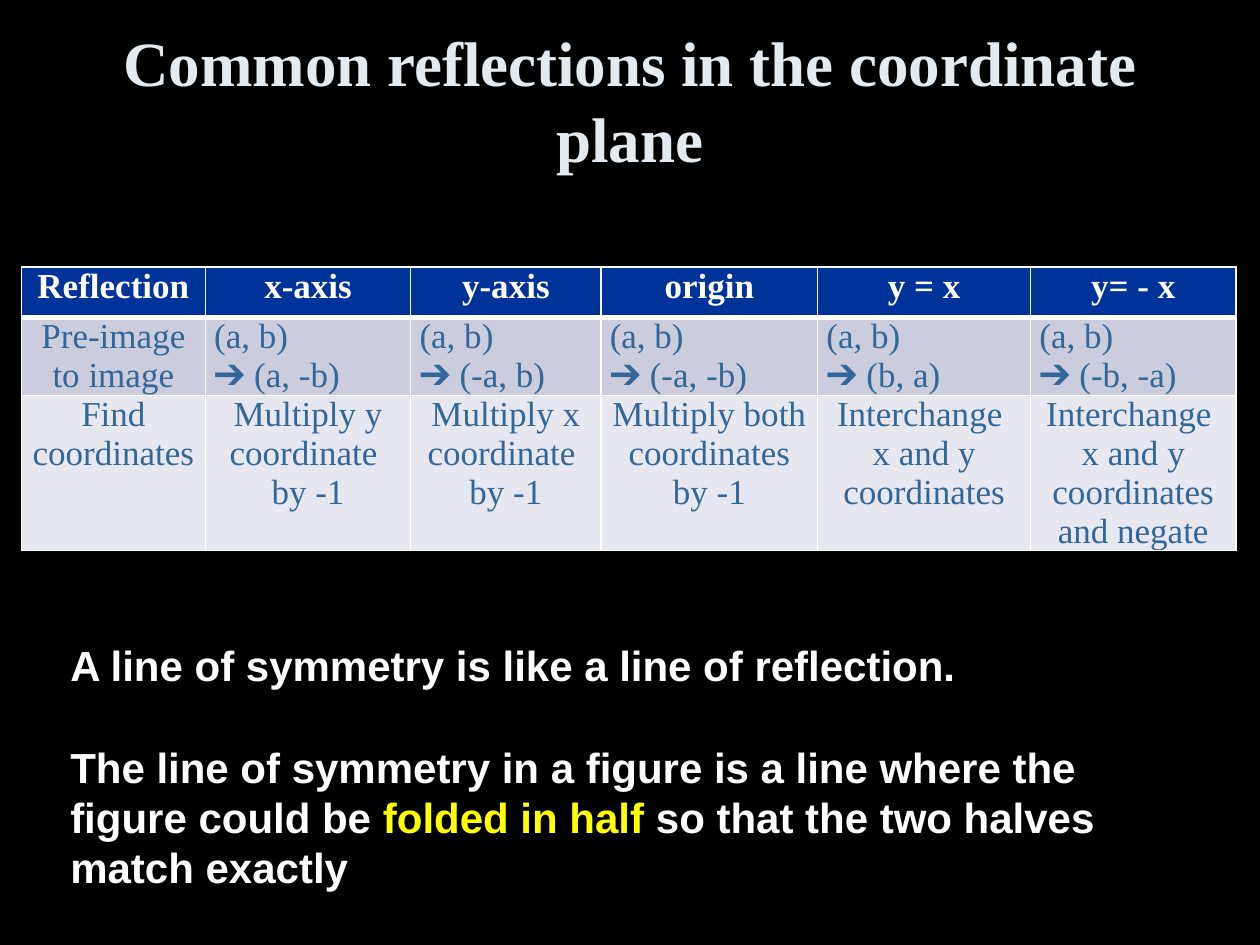
from lxml.etree import SubElement
from pptx import Presentation
from pptx.dml.color import RGBColor
from pptx.enum.text import MSO_ANCHOR as Anchor, MSO_AUTO_SIZE as AutoSize, PP_ALIGN as Align
from pptx.oxml.ns import qn
from pptx.util import Inches, Pt

WHITE, YELLOW, BLUE = "FFFFFF", "FFFF00", "336699"
TITLE_FONT = {"name": "Times New Roman", "size": Pt(36), "bold": True}
HEADER_FONT = {"name": "Times New Roman", "size": Pt(20), "bold": True}
CELL_FONT = HEADER_FONT | {"bold": False}
NOTE_FONT = {"name": "Arial", "size": Pt(24), "bold": True}

COLUMN_WIDTHS = [1.46, 1.63, 1.51, 1.72, 1.69, 1.63]
ROW_HEIGHTS = [0.4, 0.41, 0.41]
ROW_FILLS = ["003399", "CBCDDE", "E7E8EF"]
IMAGES = ["(a, -b)", "(-a, b)", "(-a, -b)", "(b, a)", "(-b, -a)"]
ROWS = [
    ["Reflection", "x-axis", "y-axis", "origin", "y = x", "y= - x"],
    ["Pre-image to image"] + [f"(a, b) \n➔ {image}" for image in IMAGES],
    [
        "Find coordinates",
        "Multiply y coordinate \nby -1",
        "Multiply x coordinate \nby -1",
        "Multiply both coordinates by -1",
        "Interchange \nx and y coordinates",
        ["Interchange \nx and y coordinates", "and negate"],
    ],
]


def color(value):
    return RGBColor.from_string(value)


def set_attributes(target, values):
    for name, value in values.items():
        setattr(target, name, value)


def add_text(paragraph, text, font, text_color):
    """Add formatted text, with a line break at each newline."""
    for index, line in enumerate(text.split("\n")):
        if index:
            paragraph.add_line_break()
        run = paragraph.add_run()
        run.text = line
        set_attributes(run.font, font)
        run.font.color.rgb = color(text_color)


def add_border(cell, side, width):
    properties = cell._tc.get_or_add_tcPr()
    line = SubElement(properties, qn(f"a:{side}"), w=str(Pt(width)))
    fill = SubElement(line, qn("a:solidFill"))
    SubElement(fill, qn("a:srgbClr"), val=WHITE)


def fill_cell(cell, content, row, column):
    set_attributes(cell, {
        "margin_left": Inches(0.07), "margin_right": Inches(0.07),
        "margin_top": 0, "margin_bottom": 0,
    })
    # The rule below the header is thicker than the others
    top = 3 if row == 1 else 1
    bottom = 3 if row == 0 else 1
    for side, width in {"lnL": 1, "lnR": 1, "lnT": top, "lnB": bottom}.items():
        add_border(cell, side, width)
    cell.fill.solid()
    cell.fill.fore_color.rgb = color(ROW_FILLS[row])

    texts = content if isinstance(content, list) else [content]
    frame = cell.text_frame
    for index, text in enumerate(texts):
        paragraph = frame.add_paragraph() if index else frame.paragraphs[0]
        paragraph.alignment = Align.LEFT if row == 1 and column else Align.CENTER
        add_text(paragraph, text, CELL_FONT if row else HEADER_FONT, BLUE if row else WHITE)


def add_title(slide):
    title = slide.shapes.title
    set_attributes(title, {
        "left": Inches(0.5), "top": Inches(0.15),
        "width": Inches(9), "height": Inches(1.28),
    })
    title.text_frame.vertical_anchor = Anchor.MIDDLE
    paragraph = title.text_frame.paragraphs[0]
    paragraph.alignment = Align.CENTER
    add_text(paragraph, "Common reflections in the coordinate plane", TITLE_FONT, "E3EBF1")


def add_reflection_table(slide):
    table = slide.shapes.add_table(
        len(ROWS), len(COLUMN_WIDTHS),
        Inches(0.17), Inches(2.12), Inches(9.63), Inches(2.4),
    ).table
    for column, width in zip(table.columns, COLUMN_WIDTHS):
        column.width = Inches(width)
    for row, height in zip(table.rows, ROW_HEIGHTS):
        row.height = Inches(height)
    for row, contents in enumerate(ROWS):
        for column, content in enumerate(contents):
            fill_cell(table.cell(row, column), content, row, column)


def add_symmetry_note(slide):
    box = slide.shapes.add_textbox(Inches(0.46), Inches(5.03), Inches(9.07), Inches(2.12))
    frame = box.text_frame
    set_attributes(frame, {"word_wrap": True, "auto_size": AutoSize.SHAPE_TO_FIT_TEXT})
    add_text(frame.paragraphs[0], "A line of symmetry is like a line of reflection.",
             NOTE_FONT, WHITE)
    definition = frame.add_paragraph()
    definition.space_before = Pt(29)
    for text, text_color in [
        ("The line of symmetry in a figure is a line where the figure could be ", WHITE),
        ("folded in half ", YELLOW),
        ("so that the two halves match exactly", WHITE),
    ]:
        add_text(definition, text, NOTE_FONT, text_color)


def main():
    presentation = Presentation()
    presentation.slide_width, presentation.slide_height = Inches(10), Inches(7.5)
    slide = presentation.slides.add_slide(presentation.slide_layouts[5])
    slide.background.fill.solid()
    slide.background.fill.fore_color.rgb = color("000000")
    add_title(slide)
    add_reflection_table(slide)
    add_symmetry_note(slide)
    presentation.save("out.pptx")


if __name__ == "__main__":
    main()
